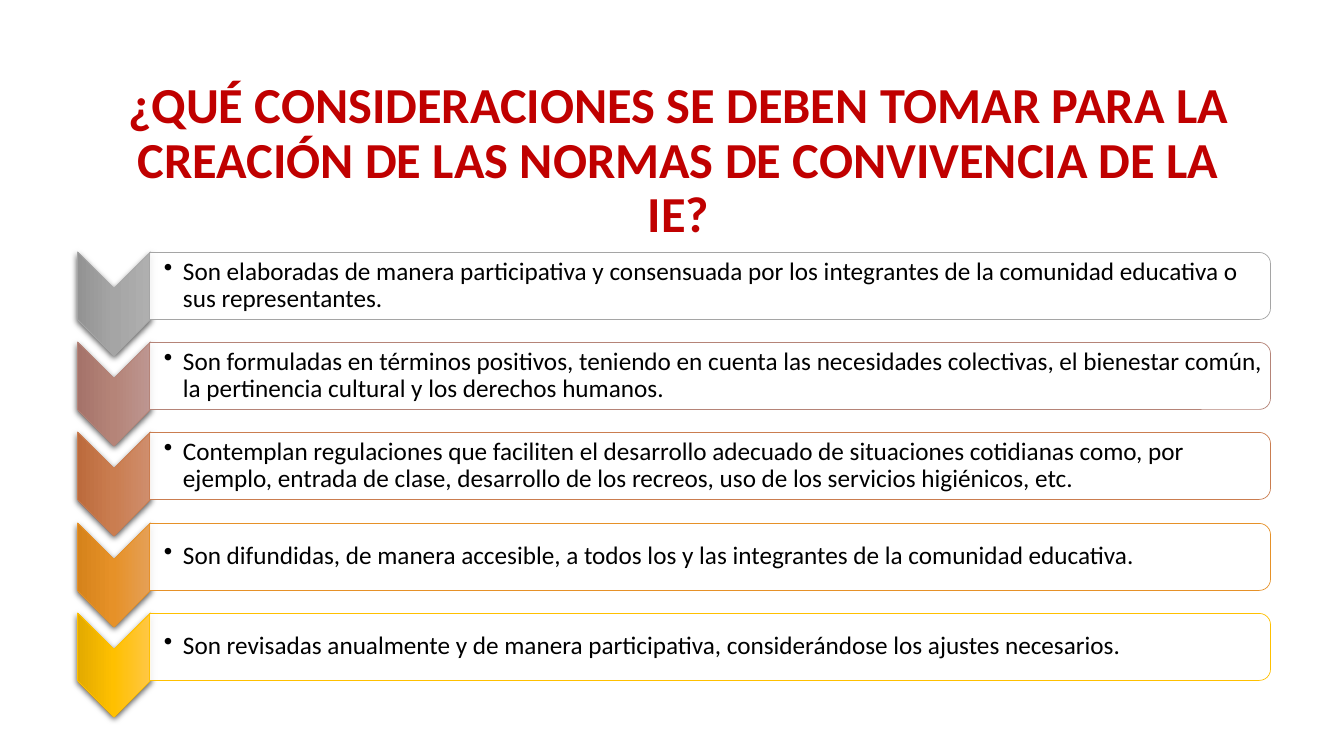
import pptx
import pptx.util
import pptx.oxml
import pptx.dml.color
import pptx.enum.shapes
import pptx.enum.text

TITLE = "¿QUÉ CONSIDERACIONES SE DEBEN TOMAR PARA LA CREACIÓN DE LAS NORMAS DE CONVIVENCIA DE LA IE?"
RULES = [
    ("Son elaboradas de manera participativa y consensuada por los integrantes de la comunidad educativa o sus representantes.",
     ("AFAFAF", "A5A5A5", "939393")),
    ("Son formuladas en términos positivos, teniendo en cuenta las necesidades colectivas, el bienestar común, la pertinencia cultural y los derechos humanos.",
     ("BD9691", "B58478", "A5736A")),
    ("Contemplan regulaciones que faciliten el desarrollo adecuado de situaciones cotidianas como, por ejemplo, entrada de clase, desarrollo de los recreos, uso de los servicios higiénicos, etc.",
     ("CF8E6E", "CA7D50", "BC6B3D")),
    ("Son difundidas, de manera accesible, a todos los y las integrantes de la comunidad educativa.",
     ("E5A057", "E69128", "D6831B")),
    ("Son revisadas anualmente y de manera participativa, considerándose los ajustes necesarios.",
     ("FFC746", "FFC000", "E3AA00")),
]
TOP, SPAN = 252, 361
SCALE = 914400 / 100.8
KIND = pptx.enum.shapes.MSO_SHAPE
ALIGN = pptx.enum.text.PP_ALIGN
NS = 'xmlns:a="http://schemas.openxmlformats.org/drawingml/2006/main"'


def px(*nums):
    """Turn pixel lengths into EMU."""
    return [round(num * SCALE) for num in nums]


def hue(code):
    """Make a colour from a hex string."""
    return pptx.dml.color.RGBColor.from_string(code)


def put(item, form):
    """Set each attribute named in a dict."""
    for name, value in form.items():
        setattr(item, name, value)


def write(slide, box, text, inset, bullet, para_form, font_form, code):
    """Add a text box holding one paragraph."""
    frame = slide.shapes.add_textbox(*px(*box)).text_frame
    left, top, right, bottom = px(*inset)
    put(frame, dict(word_wrap=True, vertical_anchor=pptx.enum.text.MSO_ANCHOR.MIDDLE,
                    margin_left=left, margin_top=top, margin_right=right, margin_bottom=bottom))
    para = frame.paragraphs[0]
    para.text = text
    if bullet:
        props = para._p.get_or_add_pPr()
        indent = px(19)[0]
        props.set("marL", str(indent))
        props.set("indent", str(-indent))
        props.append(pptx.oxml.parse_xml(f'<a:buChar {NS} char="•"/>'))
    put(para, dict(line_spacing=0.9, **para_form))
    font = para.runs[0].font
    put(font, dict(name="Calibri", **font_form))
    font.color.rgb = hue(code)


def turn(slide, kind, mid, size, line):
    """Add a shape turned a quarter clockwise about its middle."""
    (x, y), (wide, high) = mid, size
    shape = slide.shapes.add_shape(kind, *px(x - wide / 2, y - high / 2, wide, high))
    shape.rotation = 90
    shape.shadow.inherit = False
    shape.line.color.rgb = hue(line)
    shape.line.width = pptx.util.Pt(0.5)
    return shape


def shade(shape, tones):
    """Give a shape a three-tone gradient and a soft shadow."""
    props = shape._element.spPr
    stops = "".join(f'<a:gs pos="{50000 * i}"><a:srgbClr val="{tone}"/></a:gs>'
                    for i, tone in enumerate(tones))
    props.find(pptx.oxml.ns.qn("a:ln")).addprevious(pptx.oxml.parse_xml(
        f'<a:gradFill {NS} rotWithShape="1"><a:gsLst>{stops}</a:gsLst>'
        '<a:lin ang="5400000" scaled="0"/></a:gradFill>'))
    props.find(pptx.oxml.ns.qn("a:effectLst")).append(pptx.oxml.parse_xml(
        f'<a:outerShdw {NS} blurRad="57150" dist="19050" dir="5400000" algn="ctr" rotWithShape="0">'
        '<a:srgbClr val="000000"><a:alpha val="63000"/></a:srgbClr></a:outerShdw>'))


def main():
    """Build the slide."""
    deck = pptx.Presentation()
    deck.slide_width, deck.slide_height = px(1344, 756)
    slide = deck.slides.add_slide(deck.slide_layouts[6])
    write(slide, (99, 89, 1159, 146), TITLE, (10, 5, 10, 5), False,
          dict(alignment=ALIGN.CENTER), dict(size=pptx.util.Pt(36), bold=True), "C00000")
    for i, (text, tones) in enumerate(RULES):
        top = TOP + round(SPAN * i / (len(RULES) - 1))
        mark = turn(slide, KIND.CHEVRON, (114, top + 52), (104, 73), tones[1])
        shade(mark, tones)
        panel = turn(slide, KIND.ROUND_2_SAME_RECTANGLE, (710, top + 34), (67, 1121), tones[1])
        panel.fill.solid()
        panel.fill.fore_color.rgb = hue("FFFFFF")
        tint = panel._element.spPr.find(".//" + pptx.oxml.ns.qn("a:srgbClr"))
        tint.append(pptx.oxml.parse_xml(f'<a:alpha {NS} val="90000"/>'))
        write(slide, (150, top + 3, 1118, 61), text, (14, 1, 1, 1), True,
              dict(alignment=ALIGN.LEFT), dict(size=pptx.util.Pt(18)), "000000")
    deck.save("out.pptx")


if __name__ == "__main__":
    main()
